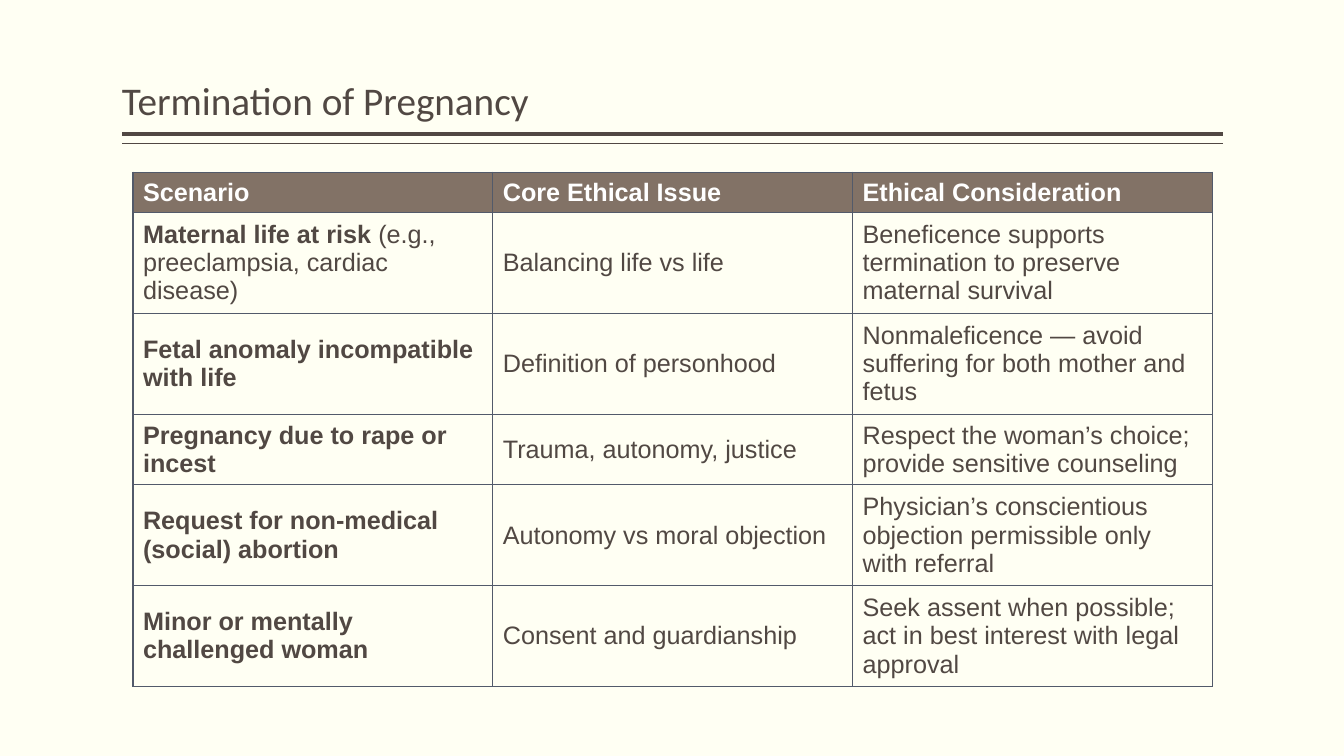
from dataclasses import dataclass

from lxml import etree
from pptx import Presentation
from pptx.dml.color import RGBColor
from pptx.enum import shapes, text
from pptx.oxml import ns
from pptx.util import Pt


@dataclass(frozen=True)
class Theme:
    paper: str = "FFFFF3"
    ink: str = "514843"
    header: str = "827266"
    header_text: str = "FFFFFF"
    border: str = "525A6A"
    title_font: str = "Calibri"
    table_font: str = "Arial"
    title_size: int = 28
    table_size: int = 18


THEME = Theme()
LEFT, RIGHT = 87.1, 873.4
COLUMN_WIDTH = 257
HEADER_HEIGHT, TWO_LINES, THREE_LINES = 28, 49.7, 70.6
HEADINGS = ("Scenario", "Core Ethical Issue", "Ethical Consideration")
SCENARIOS = (
    (THREE_LINES, "Maternal life at risk", " (e.g., preeclampsia, cardiac disease)",
     "Balancing life vs life",
     "Beneficence supports termination to preserve maternal survival"),
    (THREE_LINES, "Fetal anomaly incompatible with life", "",
     "Definition of personhood",
     "Nonmaleficence — avoid suffering for both mother and fetus"),
    (TWO_LINES, "Pregnancy due to rape or incest", "",
     "Trauma, autonomy, justice",
     "Respect the woman’s choice; provide sensitive counseling"),
    (THREE_LINES, "Request for non-medical (social) abortion", "",
     "Autonomy vs moral objection",
     "Physician’s conscientious objection permissible only with referral"),
    (THREE_LINES, "Minor or mentally challenged woman", "",
     "Consent and guardianship",
     "Seek assent when possible; act in best interest with legal approval"),
)


def color(value):
    return RGBColor.from_string(value)


def style_font(font, name, size, ink):
    font.name = name
    font.size = Pt(size)
    font.color.rgb = color(ink)


def add_rule(page, top, weight):
    rule = page.shapes.add_connector(
        shapes.MSO_CONNECTOR.STRAIGHT, Pt(RIGHT), Pt(top), Pt(LEFT), Pt(top))
    rule.line.color.rgb = color(THEME.ink)
    rule.line.width = Pt(weight)
    etree.SubElement(rule._element.spPr, ns.qn("a:effectLst"))


def add_title(page, wording):
    box = page.shapes.add_textbox(Pt(LEFT), Pt(5.8), Pt(RIGHT - LEFT), Pt(86.4))
    frame = box.text_frame
    frame.word_wrap = True
    frame.vertical_anchor = text.MSO_ANCHOR.BOTTOM
    frame.margin_left = frame.margin_right = 0
    para = frame.paragraphs[0]
    para.text = wording
    para.line_spacing = 0.9
    style_font(para.font, THEME.title_font, THEME.title_size, THEME.ink)


def set_borders(cell):
    properties = cell._tc.get_or_add_tcPr()
    for index, side in enumerate(("lnL", "lnR", "lnT", "lnB")):
        line = etree.Element(ns.qn(f"a:{side}"), w=str(Pt(1)))
        fill = etree.SubElement(line, ns.qn("a:solidFill"))
        etree.SubElement(fill, ns.qn("a:srgbClr"), val=THEME.border)
        properties.insert(index, line)


def fill_cell(cell, wording, ink, bold=False, detail="", background=None):
    cell.vertical_anchor = text.MSO_ANCHOR.MIDDLE
    if background:
        cell.fill.solid()
        cell.fill.fore_color.rgb = color(background)
    else:
        cell.fill.background()
    set_borders(cell)
    para = cell.text_frame.paragraphs[0]
    style_font(para.font, THEME.table_font, THEME.table_size, ink)
    spans = [(wording, bold)] + ([(detail, False)] if detail else [])
    for words, heavy in spans:
        span = para.add_run()
        span.text = words
        span.font.bold = heavy


def add_scenario_table(page):
    heights = [HEADER_HEIGHT] + [row[0] for row in SCENARIOS]
    frame = page.shapes.add_table(
        len(heights), len(HEADINGS), Pt(95), Pt(123),
        Pt(COLUMN_WIDTH * len(HEADINGS)), Pt(sum(heights)))
    table = frame.table
    table.horz_banding = False
    for column in table.columns:
        column.width = Pt(COLUMN_WIDTH)
    for row, height in zip(table.rows, heights):
        row.height = Pt(height)
    for index, heading in enumerate(HEADINGS):
        fill_cell(table.cell(0, index), heading, THEME.header_text,
                  bold=True, background=THEME.header)
    for index, (_, scenario, detail, issue, consideration) in enumerate(SCENARIOS, 1):
        fill_cell(table.cell(index, 0), scenario, THEME.ink, bold=True, detail=detail)
        fill_cell(table.cell(index, 1), issue, THEME.ink)
        fill_cell(table.cell(index, 2), consideration, THEME.ink)


def main():
    deck = Presentation()
    deck.slide_width, deck.slide_height = Pt(960), Pt(540)
    page = deck.slides.add_slide(deck.slide_layouts[6])
    page.background.fill.solid()
    page.background.fill.fore_color.rgb = color(THEME.paper)
    add_rule(page, 95.7, 3)
    add_rule(page, 102.7, 1)
    add_title(page, "Termination of Pregnancy")
    add_scenario_table(page)
    deck.save("out.pptx")


if __name__ == "__main__":
    main()
